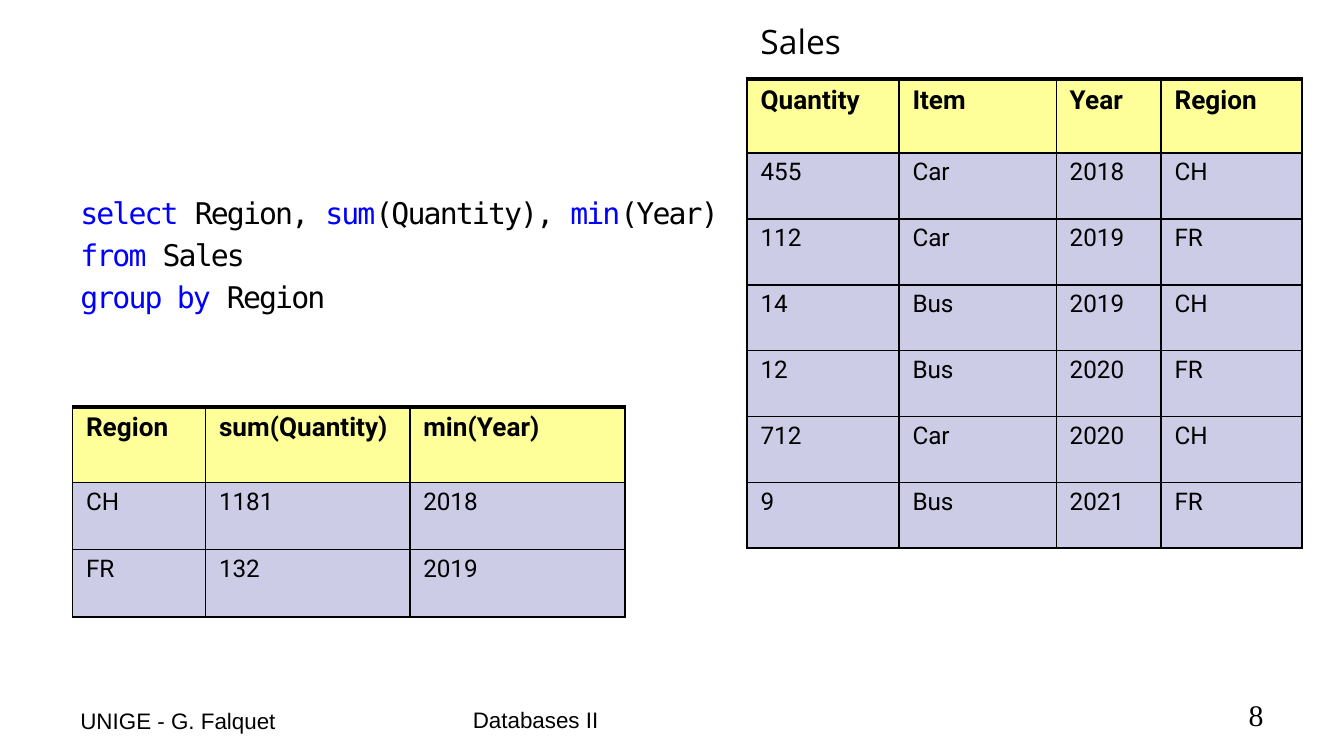
import lxml.etree
import pptx
import pptx.dml.color
import pptx.enum.text
import pptx.oxml.ns
import pptx.util

COLORS = {"text": "000000", "keyword": "0000FF", "header": "FFFF99", "body": "CCCCE6"}
ANCHOR = pptx.enum.text.MSO_ANCHOR
ALIGN = pptx.enum.text.PP_ALIGN


def write(para, text, font="Arial", size=12, color="text", bold=False, spacing=0):
    """Add a formatted run; spacing is the letter spacing in points."""
    span = para.add_run()
    span.text = text
    span.font.name = font
    span.font.size = pptx.util.Pt(size)
    span.font.bold = bold
    span.font.color.rgb = pptx.dml.color.RGBColor.from_string(COLORS[color])
    if spacing:
        span.font._element.set("spc", str(spacing * 100))


def set_border(cell, side, width):
    """Append one border; sides must come in the order L, R, T, B, before the fill."""
    properties = cell._tc.get_or_add_tcPr()
    line = lxml.etree.SubElement(properties, pptx.oxml.ns.qn("a:ln" + side))
    line.set("w", str(pptx.util.Pt(width)))
    fill = lxml.etree.SubElement(line, pptx.oxml.ns.qn("a:solidFill"))
    lxml.etree.SubElement(fill, pptx.oxml.ns.qn("a:srgbClr")).set("val", COLORS["text"])


# Widescreen page, 16:9
deck = pptx.Presentation()
deck.slide_width = pptx.util.Inches(10)
deck.slide_height = pptx.util.Inches(10 * 9 / 16)
page = deck.slides.add_slide(deck.slide_layouts[6])

# SQL query: each line is a list of (text, color)
query = [
    [("select", "keyword"), (" Region, ", "text"), ("sum", "keyword"),
     ("(Quantity), ", "text"), ("min", "keyword"), ("(Year)", "text")],
    [("from", "keyword"), (" Sales", "text")],
    [("group by", "keyword"), (" Region", "text")],
]
query_box = page.shapes.add_textbox(*map(pptx.util.Inches, (0.5, 1.4, 9, 2.7)))
query_box.text_frame.word_wrap = True
for index, line in enumerate(query):
    para = query_box.text_frame.paragraphs[0] if index == 0 else query_box.text_frame.add_paragraph()
    para.space_before = pptx.util.Pt(3.2 if index else 0)
    for text, color in line:
        write(para, text, font="DejaVu Sans Mono", size=16, color=color, spacing=-1)

# Tables: left, top, column widths, header height, row height, rows
sales = [
    ("Quantity", "Item", "Year", "Region"),
    ("455", "Car", "2018", "CH"),
    ("112", "Car", "2019", "FR"),
    ("14", "Bus", "2019", "CH"),
    ("12", "Bus", "2020", "FR"),
    ("712", "Car", "2020", "CH"),
    ("9", "Bus", "2021", "FR"),
]
result = [
    ("Region", "sum(Quantity)", "min(Year)"),
    ("CH", "1181", "2018"),
    ("FR", "132", "2019"),
]
tables = [
    (5.56, 0.59, (1.13, 1.17, 0.78, 1.05), 0.55, 0.49, sales),
    (0.54, 3.03, (0.99, 1.52, 1.6), 0.56, 0.5, result),
]
for left, top, widths, header_height, row_height, rows in tables:
    height = header_height + row_height * (len(rows) - 1)
    frame = page.shapes.add_table(
        len(rows), len(widths), *map(pptx.util.Inches, (left, top, sum(widths), height)))
    table = frame.table
    table.horz_banding = False
    for column, width in zip(table.columns, widths):
        column.width = pptx.util.Inches(width)
    for row_index, values in enumerate(rows):
        header = row_index == 0
        table.rows[row_index].height = pptx.util.Inches(header_height if header else row_height)
        for column_index, value in enumerate(values):
            cell = table.cell(row_index, column_index)
            cell.margin_left = cell.margin_right = pptx.util.Inches(0.1)
            cell.margin_top = cell.margin_bottom = pptx.util.Inches(0.04)
            for side in "LRTB":
                set_border(cell, side, 2.25 if header and side == "T" else 1)
            cell.fill.solid()
            cell.fill.fore_color.rgb = pptx.dml.color.RGBColor.from_string(
                COLORS["header" if header else "body"])
            write(cell.text_frame.paragraphs[0], value, font="Roboto",
                  size=14 if header else 13, bold=header)

# Table title and footer
labels = [
    ("Sales", (5.56, 0.11, 0.82, 0.4), "Open Sans", 18, ANCHOR.TOP, ALIGN.LEFT),
    ("8", (7.17, 5.12, 2.33, 0.38), "Times New Roman", 16, ANCHOR.BOTTOM, ALIGN.RIGHT),
    ("UNIGE - G. Falquet", (0.5, 5.12, 2.33, 0.39), "Arial", 12, ANCHOR.BOTTOM, ALIGN.LEFT),
    ("Databases II", (3.42, 5.12, 3.17, 0.38), "Arial", 12, ANCHOR.BOTTOM, ALIGN.LEFT),
]
for text, place, font, size, anchor, align in labels:
    box = page.shapes.add_textbox(*map(pptx.util.Inches, place))
    box.text_frame.word_wrap = text != "Sales"
    box.text_frame.vertical_anchor = anchor
    para = box.text_frame.paragraphs[0]
    para.alignment = align
    write(para, text, font=font, size=size)

deck.save("out.pptx")
